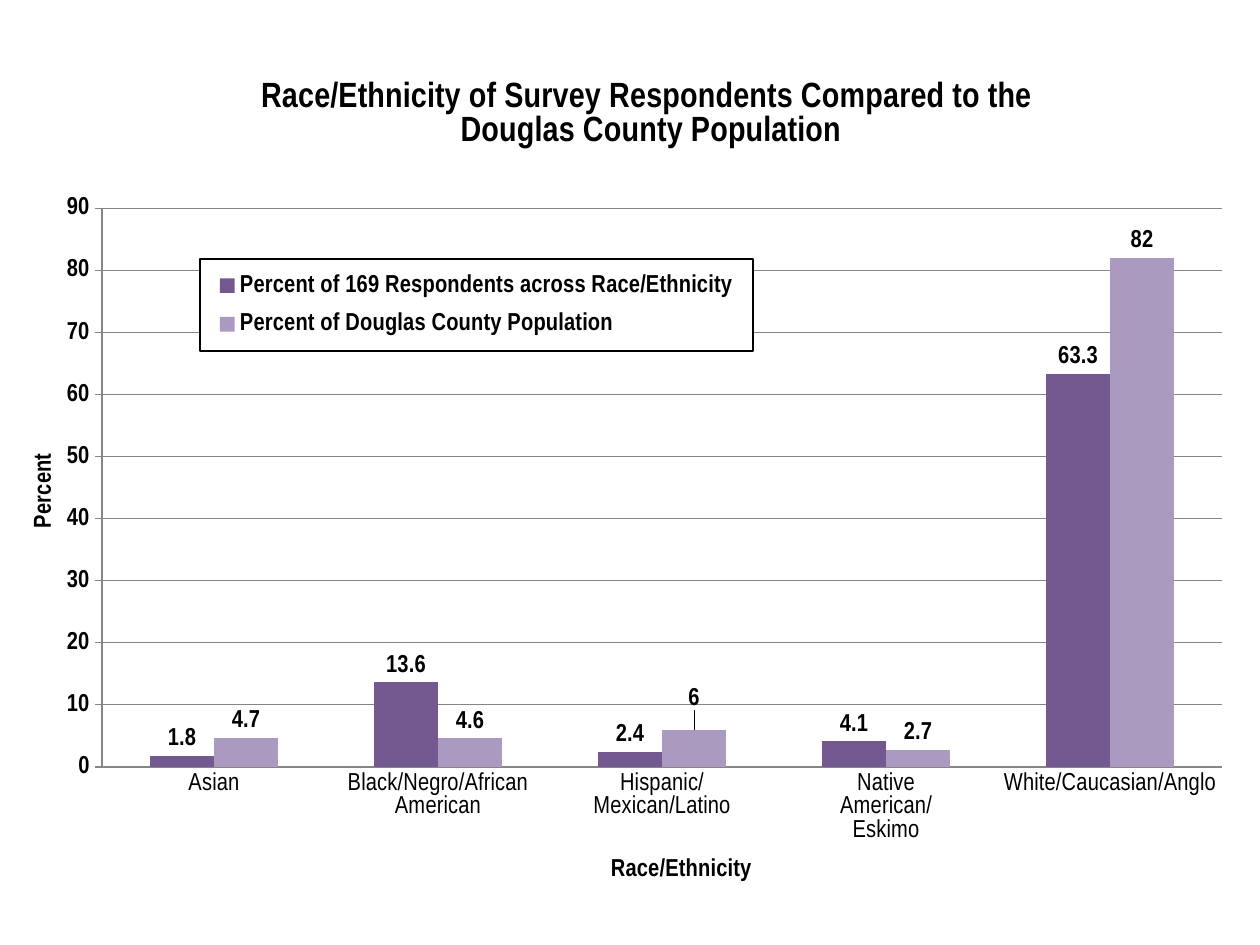
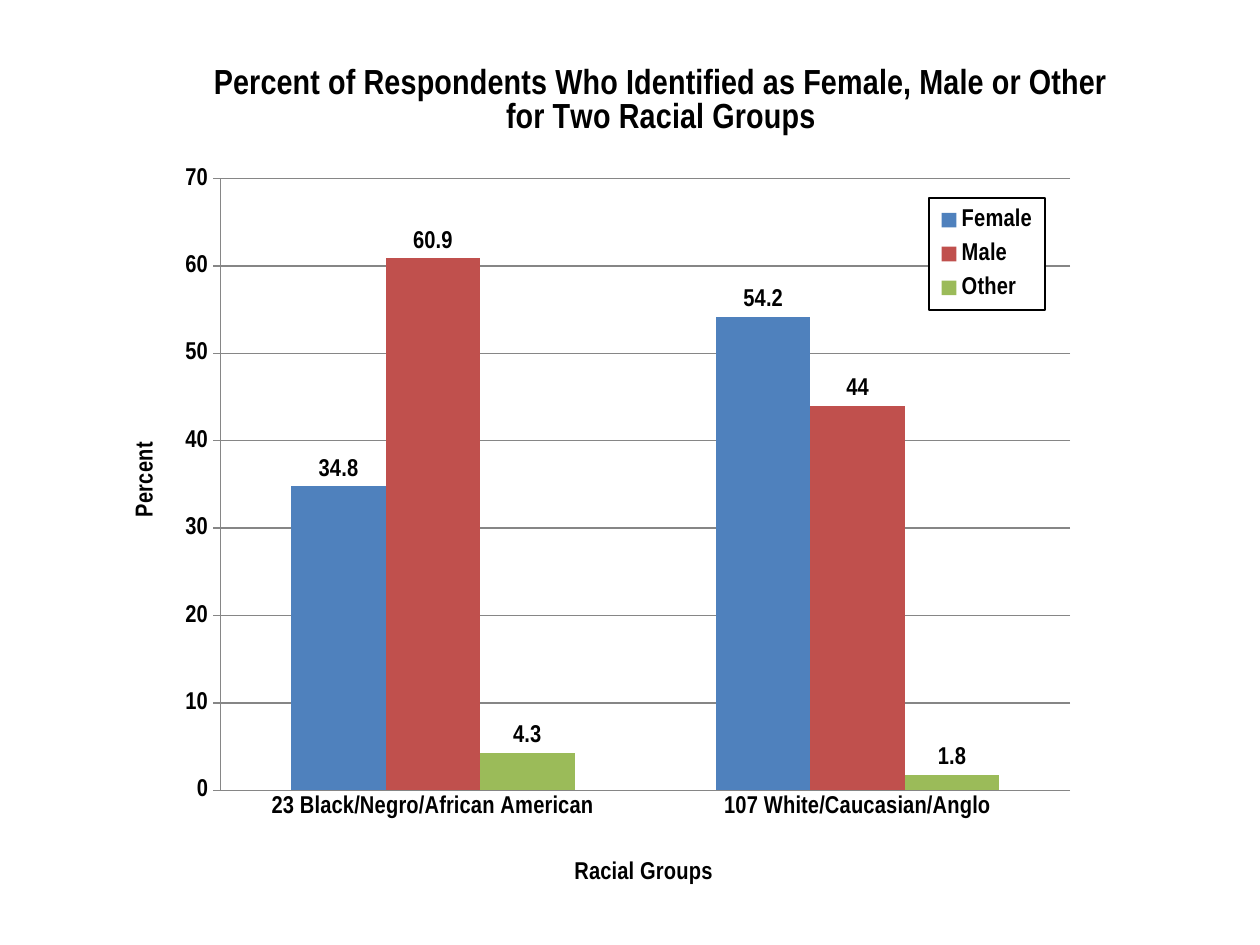
import pptx
import pptx.chart.data
import pptx.dml.color
import pptx.enum.chart
import pptx.oxml
import pptx.oxml.ns
import pptx.util
from dataclasses import dataclass

Pt = pptx.util.Pt
qn = pptx.oxml.ns.qn
enums = pptx.enum.chart


@dataclass(frozen=True)
class Theme:
    font: str = "Arial Narrow"
    text: str = "000000"
    grid: str = "868686"
    title_size: int = 20
    body_size: int = 14
    gap: int = 150


THEME = Theme()
SLIDE_SIZE = (720, 540)

CHARTS = [
    dict(
        frame=(0, 18, 720, 498),
        title="Race/Ethnicity of Survey Respondents Compared to the \nDouglas County Population",
        title_at=(147, 43),
        category_title="Race/Ethnicity", category_title_at=(346.5, 486),
        value_title="Percent", value_title_at=(14.5, 256.5),
        value_max=90,
        plot=(58.3, 119.1, 640.1, 319.2),
        legend=(114.3, 148, 316, 52.6),
        categories_bold=False,
        categories=["Asian", "Black/Negro/African American", "Hispanic/Mexican/Latino",
                    "Native American/Eskimo", "White/Caucasian/Anglo"],
        series=[
            ("Percent of 169 Respondents across Race/Ethnicity", "73598F", [1.8, 13.6, 2.4, 4.1, 63.3]),
            ("Percent of Douglas County Population", "AA9ABF", [4.7, 4.6, 6, 2.7, 82]),
        ],
        raised_labels=[(1, 2, 8)],
    ),
    dict(
        frame=(36, 24, 648, 486),
        title="Percent of Respondents Who Identified as Female, Male or Other \nfor Two Racial Groups",
        title_at=(120, 35.5),
        category_title="Racial Groups", category_title_at=(325.7, 491.5),
        value_title="Percent", value_title_at=(72.5, 252),
        value_max=70,
        plot=(126.1, 102.7, 485.4, 351.9),
        legend=(530.9, 113.7, 66.3, 64.6),
        categories_bold=True,
        categories=["23 Black/Negro/African American", "107 White/Caucasian/Anglo"],
        series=[
            ("Female", "4F81BD", [34.8, 54.2]),
            ("Male", "C0504D", [60.9, 44]),
            ("Other", "9BBB59", [4.3, 1.8]),
        ],
        raised_labels=[],
    ),
]


def rgb(value):
    return pptx.dml.color.RGBColor.from_string(value)


def assign(target, values):
    for name, value in values.items():
        setattr(target, name, value)


def style_font(font, size=THEME.body_size, bold=True):
    assign(font, dict(name=THEME.font, size=Pt(size), bold=bold))
    font.color.rgb = rgb(THEME.text)


def set_layout(element, values, after=None, inner=False, edge=True):
    for previous in element.findall(qn("c:layout")):
        element.remove(previous)
    parts = ['<c:layoutTarget val="inner"/>'] if inner else []
    if edge:
        parts += [f'<c:{axis}Mode val="edge"/>' for axis in "xy"]
    parts += [f'<c:{key} val="{value:.4f}"/>' for key, value in zip("xywh", values)]
    layout = pptx.oxml.parse_xml(
        f'<c:layout {pptx.oxml.ns.nsdecls("c")}><c:manualLayout>{"".join(parts)}'
        '</c:manualLayout></c:layout>')
    if after:
        element.find(qn(after)).addnext(layout)
    else:
        element.insert(0, layout)


def fractions(box, frame):
    left, top, width, height = frame
    scaled = ((box[0] - left) / width, (box[1] - top) / height)
    if len(box) == 4:
        scaled += (box[2] / width, box[3] / height)
    return scaled


def write_title(owner, words, at, frame, size=THEME.body_size, upright=True):
    owner.has_title = True
    title = owner.chart_title if hasattr(owner, "chart_title") else owner.axis_title
    title.text_frame.text = words
    for paragraph in title.text_frame.paragraphs:
        for run in paragraph.runs:
            style_font(run.font, size)
    element = title._element
    if not upright:
        assign_body = element.find(".//" + qn("a:bodyPr"))
        assign_body.set("rot", "-5400000")
        assign_body.set("vert", "horz")
    set_layout(element, fractions(at, frame), after="c:tx")


def format_axes(chart, content):
    frame = content["frame"]
    category, value = chart.category_axis, chart.value_axis
    write_title(category, content["category_title"], content["category_title_at"], frame)
    write_title(value, content["value_title"], content["value_title_at"], frame, upright=False)
    marks = enums.XL_TICK_MARK
    assign(category, dict(major_tick_mark=marks.NONE, minor_tick_mark=marks.NONE))
    assign(value, dict(major_tick_mark=marks.OUTSIDE, minor_tick_mark=marks.NONE,
                       minimum_scale=0, maximum_scale=content["value_max"], major_unit=10,
                       has_major_gridlines=True))
    style_font(category.tick_labels.font, bold=content["categories_bold"])
    style_font(value.tick_labels.font)
    for line in (category.format.line, value.format.line, value.major_gridlines.format.line):
        line.color.rgb = rgb(THEME.grid)
        line.width = Pt(0.75)


def format_series(chart, content):
    plot = chart.plots[0]
    assign(plot, dict(gap_width=THEME.gap, overlap=0, vary_by_categories=False))
    outside = enums.XL_LABEL_POSITION.OUTSIDE_END
    for series, (_, color, _) in zip(plot.series, content["series"]):
        series.format.fill.solid()
        series.format.fill.fore_color.rgb = rgb(color)
        labels = series.data_labels
        assign(labels, dict(show_value=True, position=outside))
        style_font(labels.font)
    for series_index, point_index, rise in content["raised_labels"]:
        label = plot.series[series_index].points[point_index].data_label
        label.position = outside
        style_font(label.font)
        entry = plot.series[series_index].data_labels._element.find(qn("c:dLbl"))
        set_layout(entry, (0, -rise / content["frame"][3]), after="c:idx", edge=False)


def format_legend(chart, content):
    chart.has_legend = True
    legend = chart.legend
    assign(legend, dict(position=enums.XL_LEGEND_POSITION.RIGHT, include_in_layout=False))
    style_font(legend.font)
    element = legend._element
    set_layout(element, fractions(content["legend"], content["frame"]), after="c:legendPos")
    element.find(qn("c:txPr")).addprevious(pptx.oxml.parse_xml(
        f'<c:spPr {pptx.oxml.ns.nsdecls("c", "a")}>'
        '<a:solidFill><a:srgbClr val="FFFFFF"/></a:solidFill>'
        f'<a:ln w="{Pt(0.75)}"><a:solidFill><a:srgbClr val="{THEME.text}"/></a:solidFill></a:ln>'
        '</c:spPr>'))


def add_column_chart(slide, content):
    data = pptx.chart.data.CategoryChartData()
    data.categories = content["categories"]
    for name, _, values in content["series"]:
        data.add_series(name, values)
    frame = content["frame"]
    chart = slide.shapes.add_chart(
        enums.XL_CHART_TYPE.COLUMN_CLUSTERED, *map(Pt, frame), data).chart
    style_font(chart.font)
    write_title(chart, content["title"], content["title_at"], frame, THEME.title_size)
    format_axes(chart, content)
    format_series(chart, content)
    format_legend(chart, content)
    plot_area = chart._chartSpace.find(".//" + qn("c:plotArea"))
    set_layout(plot_area, fractions(content["plot"], frame), inner=True)


def main():
    deck = pptx.Presentation()
    deck.slide_width, deck.slide_height = map(Pt, SLIDE_SIZE)
    for content in CHARTS:
        add_column_chart(deck.slides.add_slide(deck.slide_layouts[6]), content)
    deck.save("out.pptx")


if __name__ == "__main__":
    main()
